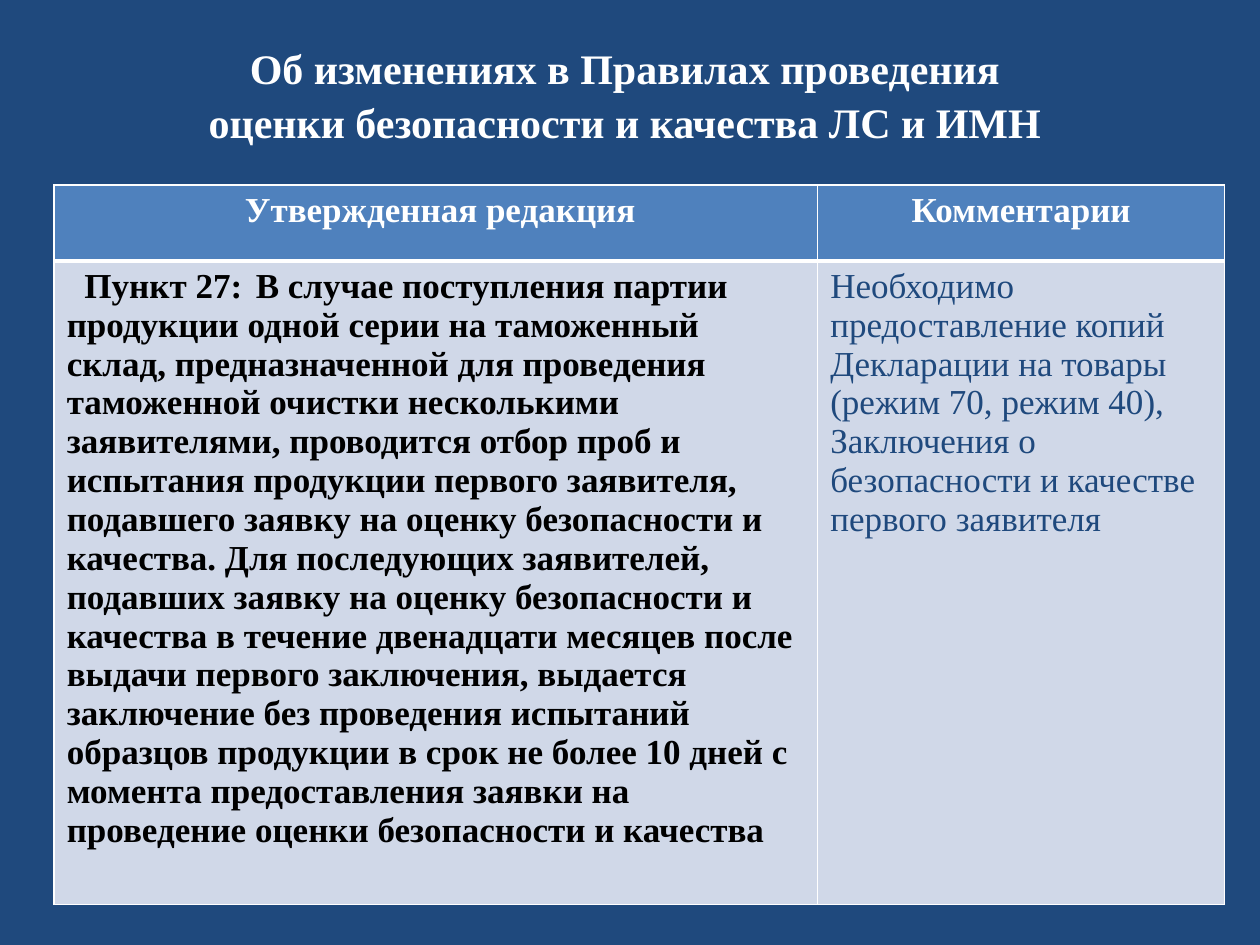
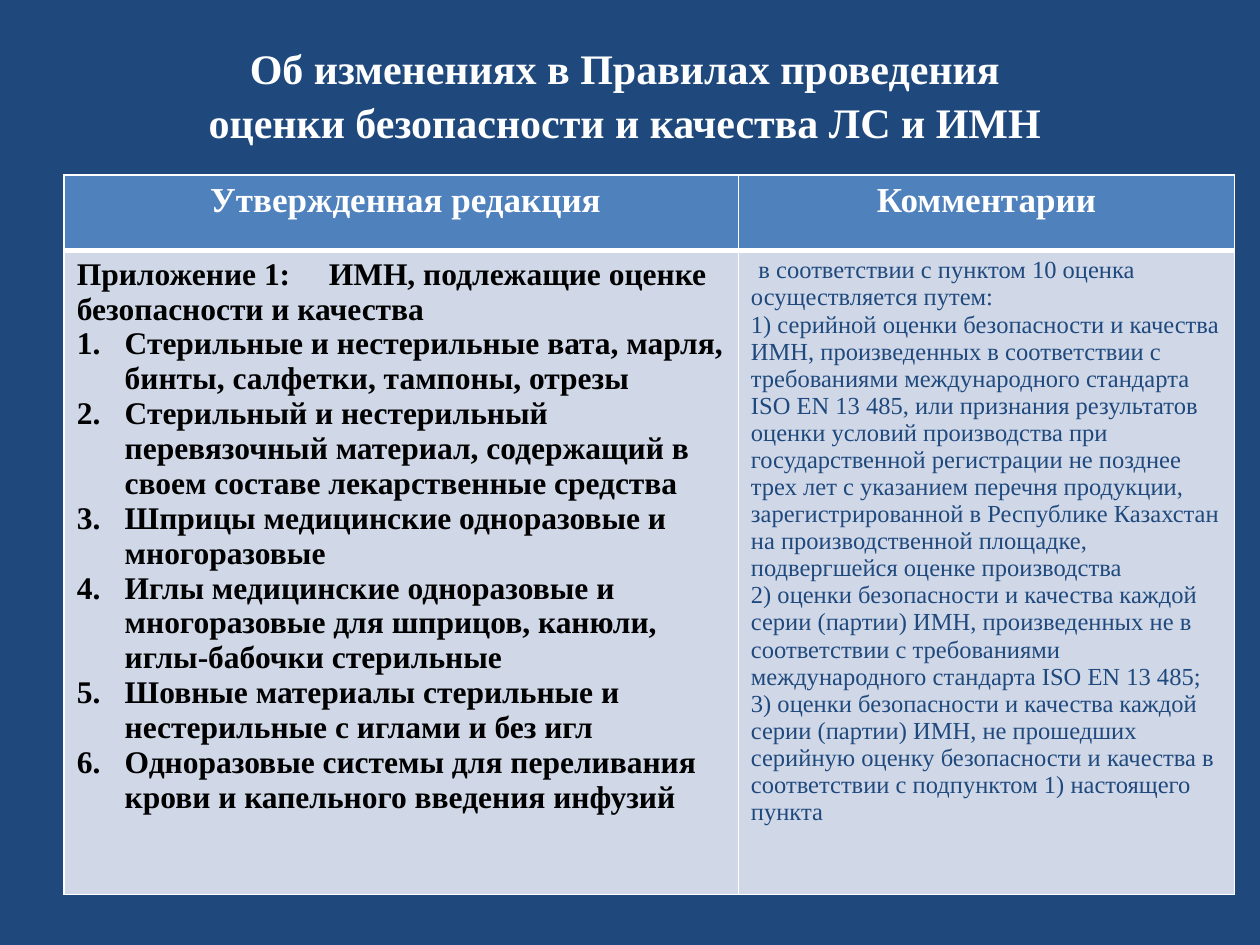
from dataclasses import dataclass

from lxml.etree import SubElement
from pptx import Presentation
from pptx.dml.color import RGBColor
from pptx.enum.text import PP_ALIGN
from pptx.oxml.ns import qn
from pptx.util import Inches, Pt


@dataclass(frozen=True)
class Theme:
    """Colours, font and type sizes shared by the slides."""
    font: str = "Times New Roman"
    navy: str = "1F497D"
    header: str = "4F81BD"
    body: str = "D0D8E8"
    white: str = "FFFFFF"
    black: str = "000000"
    title_size: int = 24
    large: int = 20
    medium: int = 18
    small: int = 14
    thin_rule: int = 1
    header_rule: int = 3


THEME = Theme()
TITLE = (
    "Об изменениях в Правилах проведения ",
    "оценки безопасности и качества ЛС и ИМН ",
)
HEADINGS = (" Утвержденная редакция", "Комментарии")
CLAUSE_27 = (
    "Пункт 27:\tВ случае поступления партии продукции одной серии на таможенный склад, "
    "предназначенной для проведения таможенной очистки несколькими заявителями, проводится "
    "отбор проб и испытания продукции первого заявителя, подавшего заявку на оценку "
    "безопасности и качества. Для последующих заявителей, подавших заявку на оценку "
    "безопасности и качества в течение двенадцати месяцев после выдачи первого заключения, "
    "выдается заключение без проведения испытаний образцов продукции в срок не более 10 дней "
    "с момента предоставления заявки на проведение оценки безопасности и качества"
)
REQUIRED_COPIES = (
    "Необходимо предоставление копий Декларации на товары (режим 70, режим 40),",
    "Заключения о безопасности и качестве первого заявителя",
)
APPENDIX_1 = "Приложение 1:\tИМН, подлежащие оценке безопасности и качества"
DEVICES = (
    "Стерильные и нестерильные вата, марля, бинты, салфетки, тампоны, отрезы",
    "Стерильный и нестерильный перевязочный материал, содержащий в своем составе "
    "лекарственные средства",
    "Шприцы медицинские одноразовые и многоразовые",
    "Иглы медицинские одноразовые и многоразовые для шприцов, канюли, иглы-бабочки стерильные",
    "Шовные материалы стерильные и нестерильные с иглами и без игл",
    "Одноразовые системы для переливания крови и капельного введения инфузий",
)
CLAUSE_10 = "в соответствии с пунктом 10 оценка осуществляется путем:"
ASSESSMENTS = (
    "1) серийной оценки безопасности и качества ИМН, произведенных в соответствии с "
    "требованиями международного стандарта ISO EN 13 485, или признания результатов оценки "
    "условий производства при государственной регистрации не позднее трех лет с указанием "
    "перечня продукции, зарегистрированной в Республике Казахстан на производственной "
    "площадке, подвергшейся оценке производства",
    "2) оценки безопасности и качества каждой серии (партии) ИМН, произведенных не в "
    "соответствии с требованиями международного стандарта ISO EN 13 485;",
    "3) оценки безопасности и качества каждой серии (партии) ИМН, не прошедших серийную "
    "оценку безопасности и качества в соответствии с подпунктом 1) настоящего пункта",
)


def write(frame, *lines, size, color, bold=False, align=PP_ALIGN.LEFT, before=0,
          margin=0, indent=0, numbered=False, tab=None):
    """Add each line to the frame as a formatted paragraph."""
    for line in lines:
        paragraph = frame.paragraphs[-1]
        if paragraph.runs:
            paragraph = frame.add_paragraph()
        paragraph.alignment = align
        paragraph.space_before = Pt(before)
        run = paragraph.add_run()
        run.text = line
        run.font.name = THEME.font
        run.font.size = Pt(size)
        run.font.bold = bold
        run.font.color.rgb = RGBColor.from_string(color)
        properties = paragraph._p.get_or_add_pPr()
        properties.set("marL", str(Inches(margin)))
        properties.set("indent", str(Inches(indent)))
        if numbered:
            SubElement(properties, qn("a:buAutoNum"), type="arabicPeriod")
        if tab:
            stops = SubElement(properties, qn("a:tabLst"))
            SubElement(stops, qn("a:tab"), pos=str(Inches(tab)), algn="l")


def style_cell(cell, fill, top, bottom):
    """Rule the cell in white and fill it."""
    properties = cell._tc.get_or_add_tcPr()
    widths = {"lnL": THEME.thin_rule, "lnR": THEME.thin_rule, "lnT": top, "lnB": bottom}
    for edge, width in widths.items():
        rule = SubElement(properties, qn(f"a:{edge}"), w=str(Pt(width)))
        paint = SubElement(rule, qn("a:solidFill"))
        SubElement(paint, qn("a:srgbClr"), val=THEME.white)
    cell.fill.solid()
    cell.fill.fore_color.rgb = RGBColor.from_string(fill)


def add_titled_slide(deck):
    """Add a navy slide with the shared title."""
    slide = deck.slides.add_slide(deck.slide_layouts[6])
    slide.background.fill.solid()
    slide.background.fill.fore_color.rgb = RGBColor.from_string(THEME.navy)
    title = slide.shapes.add_textbox(Inches(0.12), Inches(0.29), Inches(9.76), Inches(6.06))
    title.text_frame.word_wrap = True
    write(title.text_frame, *TITLE, size=THEME.title_size, color=THEME.white, bold=True,
          align=PP_ALIGN.CENTER, before=2)
    return slide


def add_comparison(slide, left, top, widths):
    """Add the two-column table and return the text frames of its body."""
    heights = (0.6, 5.11)
    comparison = slide.shapes.add_table(
        2, 2, Inches(left), Inches(top), Inches(sum(widths)), Inches(sum(heights))).table
    comparison.horz_banding = False
    for column, width in zip(comparison.columns, widths):
        column.width = Inches(width)
    for row, height in zip(comparison.rows, heights):
        row.height = Inches(height)
    for index, heading in enumerate(HEADINGS):
        head, body = comparison.cell(0, index), comparison.cell(1, index)
        style_cell(head, THEME.header, THEME.thin_rule, THEME.header_rule)
        style_cell(body, THEME.body, THEME.header_rule, THEME.thin_rule)
        write(head.text_frame, heading, size=THEME.large, color=THEME.white, bold=True,
              align=PP_ALIGN.CENTER)
    return [cell.text_frame for cell in comparison.rows[1].cells]


def add_clause_slide(deck):
    """Build the slide on clause 27."""
    approved, comments = add_comparison(add_titled_slide(deck), 0.43, 1.47, (6.06, 3.23))
    write(approved, CLAUSE_27, size=THEME.large, color=THEME.black, bold=True,
          indent=0.14, tab=1.67)
    write(comments, *REQUIRED_COPIES, size=THEME.large, color=THEME.navy)


def add_appendix_slide(deck):
    """Build the slide on appendix 1."""
    approved, comments = add_comparison(add_titled_slide(deck), 0.51, 1.39, (5.35, 3.94))
    listing = {"size": THEME.medium, "color": THEME.black, "bold": True}
    write(approved, APPENDIX_1, tab=1.94, **listing)
    write(approved, *DEVICES, margin=0.38, indent=-0.38, numbered=True, **listing)
    remark = {"size": THEME.small, "color": THEME.navy}
    write(comments, CLAUSE_10, before=4, indent=0.06, **remark)
    write(comments, *ASSESSMENTS, **remark)


def main():
    """Build and save the deck."""
    deck = Presentation()
    deck.slide_width, deck.slide_height = Inches(10), Inches(7.5)
    add_clause_slide(deck)
    add_appendix_slide(deck)
    deck.save("out.pptx")


if __name__ == "__main__":
    main()
